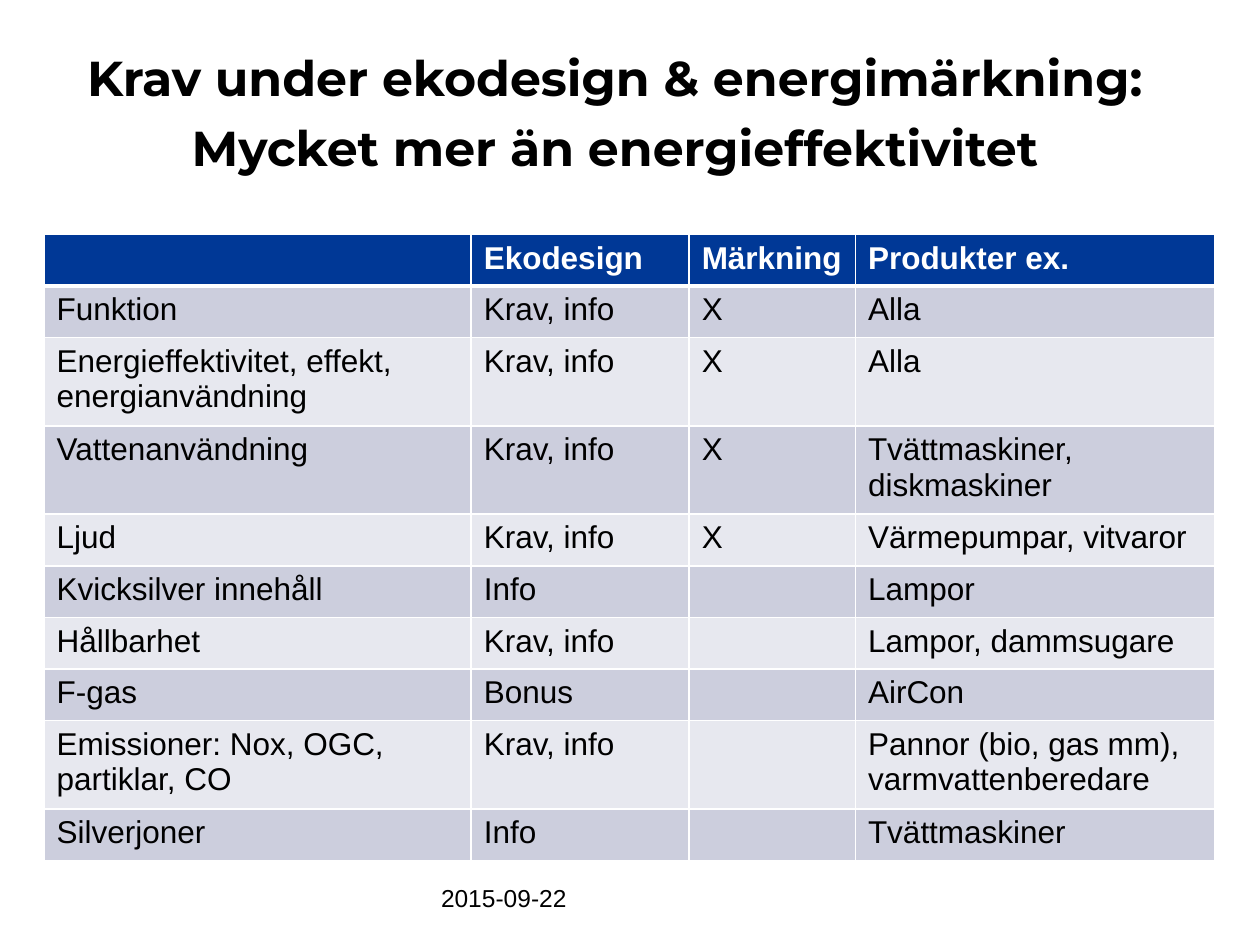
"""Build a slide with a table of ecodesign and energy labelling requirements."""
import pptx
import pptx.dml.color
import pptx.enum.text
import pptx.oxml
import pptx.oxml.ns
import pptx.util
from pptx.util import Inches

TITLE = "Krav under ekodesign & energimärkning: Mycket mer än energieffektivitet"
DATE = "2015-09-22"
ROWS = [
    ("", "Ekodesign", "Märkning", "Produkter ex."),
    ("Funktion", "Krav, info", "X", "Alla"),
    ("Energieffektivitet, effekt, energianvändning", "Krav, info", "X", "Alla"),
    ("Vattenanvändning", "Krav, info", "X", "Tvättmaskiner, diskmaskiner"),
    ("Ljud", "Krav, info", "X", "Värmepumpar, vitvaror"),
    ("Kvicksilver innehåll", "Info", "", "Lampor"),
    ("Hållbarhet", "Krav, info", "", "Lampor, dammsugare"),
    ("F-gas", "Bonus", "", "AirCon"),
    ("Emissioner: Nox, OGC, partiklar, CO", "Krav, info", "",
     "Pannor (bio, gas mm),\nvarmvattenberedare"),
    ("Silverjoner", "Info", "", "Tvättmaskiner"),
]
COLUMN_WIDTHS = [3.39, 1.73, 1.32, 2.85]
ROW_HEIGHT = 0.41
BLACK, WHITE, HEADER_FILL = "000000", "FFFFFF", "003896"
BAND_FILLS = ["E7E8EF", "CCCEDD"]


def rgb(value):
    """Return the colour for a hex string."""
    return pptx.dml.color.RGBColor.from_string(value)


def write_text(frame, text, size, color=BLACK, bold=False, name="Arial"):
    """Write each line of the text as a paragraph and return the paragraphs."""
    for index, line in enumerate(text.split("\n")):
        paragraph = frame.add_paragraph() if index else frame.paragraphs[0]
        run = paragraph.add_run()
        run.text = line
        run.font.size = pptx.util.Pt(size)
        run.font.name = name
        run.font.bold = bold
        run.font.color.rgb = rgb(color)
    return frame.paragraphs


def add_text_frame(slide, left, top, width, height, anchor):
    """Add a wrapping text box without margins and return its frame."""
    box = slide.shapes.add_textbox(*map(Inches, (left, top, width, height)))
    frame = box.text_frame
    frame.word_wrap = True
    frame.vertical_anchor = anchor
    frame.margin_left = frame.margin_right = 0
    frame.margin_top = frame.margin_bottom = 0
    return frame


def add_borders(cell, widths):
    """Draw white borders with the point width given for each side."""
    properties = cell._tc.get_or_add_tcPr()
    for side, width in widths.items():
        properties.append(pptx.oxml.parse_xml(
            f'<a:ln{side} {pptx.oxml.ns.nsdecls("a")} w="{pptx.util.Pt(width)}">'
            f'<a:solidFill><a:srgbClr val="{WHITE}"/></a:solidFill></a:ln{side}>'))


def add_requirements(slide):
    """Add the table of requirements."""
    shape = slide.shapes.add_table(
        len(ROWS), len(COLUMN_WIDTHS), Inches(0.35), Inches(1.86),
        Inches(sum(COLUMN_WIDTHS)), Inches(ROW_HEIGHT * len(ROWS)))
    table = shape.table
    for column, width in zip(table.columns, COLUMN_WIDTHS):
        column.width = Inches(width)
    for row_index, texts in enumerate(ROWS):
        header = row_index == 0
        table.rows[row_index].height = Inches(ROW_HEIGHT)
        for column_index, text in enumerate(texts):
            cell = table.cell(row_index, column_index)
            add_borders(cell, {"L": 1, "R": 1, "T": 3 if row_index == 1 else 1,
                               "B": 3 if header else 1})
            cell.fill.solid()
            cell.fill.fore_color.rgb = rgb(HEADER_FILL if header else BAND_FILLS[row_index % 2])
            if text:
                write_text(cell.text_frame, text, 18, WHITE if header else BLACK, header)


def main():
    """Build and save the presentation."""
    presentation = pptx.Presentation()
    presentation.slide_width = Inches(10)
    presentation.slide_height = Inches(7.5)
    slide = presentation.slides.add_slide(presentation.slide_layouts[6])
    anchors = pptx.enum.text.MSO_ANCHOR

    title_frame = add_text_frame(slide, 0.35, 0.29, 9.06, 1.08, anchors.TOP)
    for paragraph in write_text(title_frame, TITLE, 28, bold=True, name="Montserrat"):
        paragraph.alignment = pptx.enum.text.PP_ALIGN.CENTER
        paragraph.line_spacing = pptx.util.Pt(40)

    add_requirements(slide)
    write_text(add_text_frame(slide, 3.5, 6.74, 2.08, 0.5, anchors.BOTTOM), DATE, 14)
    presentation.save("out.pptx")


if __name__ == "__main__":
    main()
